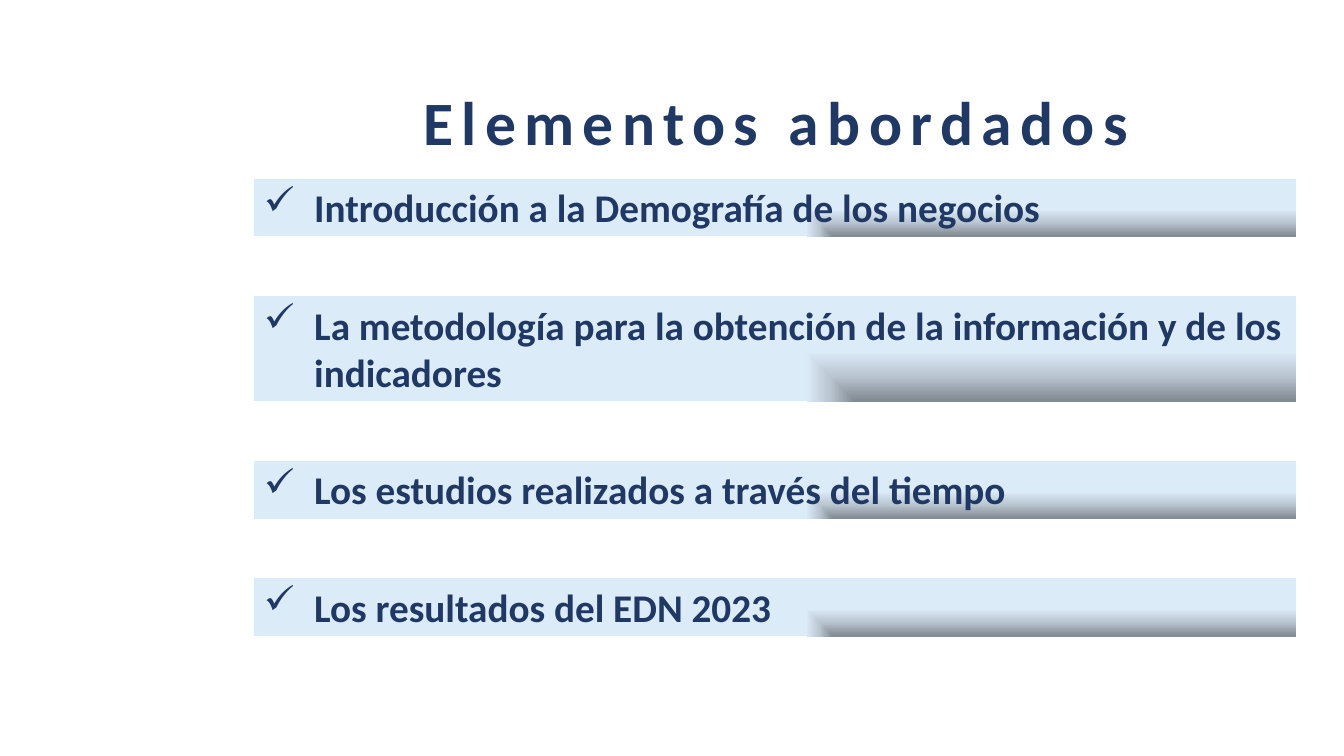
"""Build the agenda slide listing the topics covered."""
from lxml import etree
from pptx import Presentation
from pptx.dml.color import RGBColor
from pptx.enum.shapes import MSO_SHAPE
from pptx.enum.text import MSO_ANCHOR, MSO_AUTO_SIZE, PP_ALIGN
from pptx.oxml import parse_xml
from pptx.oxml.ns import qn
from pptx.util import Cm, Pt

TITLE = "Elementos abordados"
TOPICS = [
    ("Introducción a la Demografía de los negocios", 1),
    ("La metodología para la obtención de la información y de los indicadores", 2),
    ("Los estudios realizados a través del tiempo", 1),
    ("Los resultados del EDN 2023", 1),
]
NAVY = RGBColor(0x20, 0x38, 0x64)
BAND_STOPS = [
    (2, RGBColor(0x83, 0x8B, 0x93)),
    (49, RGBColor(0xBA, 0xC6, 0xD1)),
    (94, RGBColor(0xDC, 0xEB, 0xF8)),
]
FONT = "Calibri"
BAND_LEFT, BAND_TOP, BAND_WIDTH = 6.4, 4.5, 26.26
LINE_HEIGHT, PADDING, GAP = 1.19, 0.27, 1.5
INDENT = Cm(1.27)
RECTANGLE = MSO_SHAPE.RECTANGLE
TOP = MSO_ANCHOR.TOP
NO_AUTOFIT = MSO_AUTO_SIZE.NONE
LEFT, CENTER = PP_ALIGN.LEFT, PP_ALIGN.CENTER
NAMESPACE = "http://schemas.openxmlformats.org/drawingml/2006/main"


def write_text(shape, text, size, align, bullet=None, spacing=None):
    """Fill a shape with one bold navy paragraph."""
    frame = shape.text_frame
    frame.word_wrap = True
    frame.auto_size = NO_AUTOFIT
    frame.vertical_anchor = TOP
    para = frame.paragraphs[0]
    para.alignment = align
    if bullet:
        properties = para._p.get_or_add_pPr()
        properties.set("marL", str(INDENT))
        properties.set("indent", str(-INDENT))
        etree.SubElement(properties, qn("a:buChar")).set("char", bullet)
    span = para.add_run()
    span.text = text
    span.font.name = FONT
    span.font.size = Pt(size)
    span.font.bold = True
    span.font.color.rgb = NAVY
    if spacing:
        span._r.get_or_add_rPr().set("spc", str(spacing * 100))


def shade_band(band):
    """Give a band its gradient, darkest at the lower right corner."""
    stops = "".join(
        f'<a:gs pos="{position * 1000}"><a:srgbClr val="{color}"/></a:gs>'
        for position, color in BAND_STOPS
    )
    gradient = parse_xml(
        f'<a:gradFill xmlns:a="{NAMESPACE}" rotWithShape="1"><a:gsLst>{stops}</a:gsLst>'
        '<a:path path="rect"><a:fillToRect l="100000" t="100000"/></a:path>'
        '<a:tileRect r="-100000" b="-100000"/></a:gradFill>'
    )
    band._element.spPr.find(qn("a:prstGeom")).addnext(gradient)
    band.line.fill.background()
    band.shadow.inherit = False


def main():
    """Create the slide and save the deck."""
    deck = Presentation()
    deck.slide_width, deck.slide_height = Cm(33.87), Cm(19.05)
    page = deck.slides.add_slide(deck.slide_layouts[5])

    title = page.shapes.title
    title.left, title.top, title.width, title.height = Cm(8.13), Cm(1.98), Cm(22.86), Cm(2.14)
    write_text(title, TITLE, 44, CENTER, spacing=6)

    top = BAND_TOP
    for topic, lines in TOPICS:
        height = PADDING + LINE_HEIGHT * lines
        band = page.shapes.add_shape(RECTANGLE, Cm(BAND_LEFT), Cm(top), Cm(BAND_WIDTH), Cm(height))
        shade_band(band)
        write_text(band, topic, 28, LEFT, bullet="✓")
        top += height + GAP

    deck.save("out.pptx")


if __name__ == "__main__":
    main()
